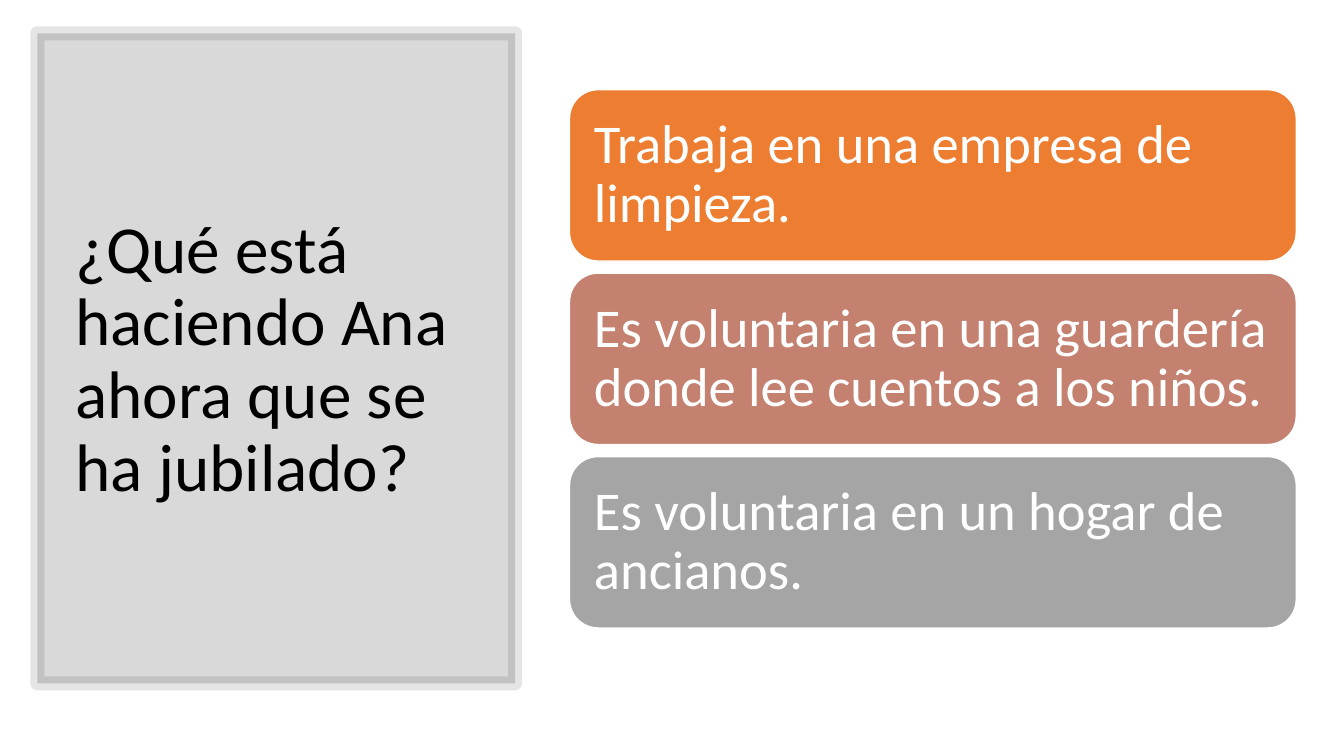
from lxml.etree import SubElement
from pptx import Presentation
from pptx.dml.color import RGBColor
from pptx.enum.shapes import MSO_SHAPE
from pptx.enum.text import MSO_ANCHOR, PP_ALIGN
from pptx.oxml.ns import qn
from pptx.util import Pt


def paint(fill, color, opacity=100):
    fill.solid()
    fill.fore_color.rgb = RGBColor.from_string(color)
    if opacity < 100:
        tint = fill._xPr.find(qn("a:solidFill"))[0]
        SubElement(tint, qn("a:alpha"), val=str(opacity * 1000))


def write(holder, words, size, color, inset_x, inset_y):
    frame = holder.text_frame
    frame.word_wrap = True
    frame.vertical_anchor = MSO_ANCHOR.MIDDLE
    frame.margin_left = frame.margin_right = Pt(inset_x)
    frame.margin_top = frame.margin_bottom = Pt(inset_y)
    paragraph = frame.paragraphs[0]
    paragraph.alignment = PP_ALIGN.LEFT
    paragraph.line_spacing = 0.9
    run = paragraph.add_run()
    run.text = words
    run.font.name = "Calibri"
    run.font.size = Pt(size)
    paint(run.font.fill, color)


deck = Presentation()
deck.slide_width = Pt(960)
deck.slide_height = Pt(540)
slide = deck.slides.add_slide(deck.slide_layouts[6])

question_panel = slide.shapes.add_shape(
    MSO_SHAPE.RECTANGLE, Pt(26.64), Pt(23.76), Pt(341.28), Pt(464.4))
question_panel.shadow.inherit = False
paint(question_panel.fill, "000000", 15)
question_panel.line.width = Pt(10)
paint(question_panel.line.fill, "000000", 10)

question = slide.shapes.add_textbox(Pt(46.8), Pt(50.4), Pt(299.5), Pt(414))
write(question, "¿Qué está haciendo Ana ahora que se ha jubilado?", 48, "000000", 7.2, 3.6)

answers = [
    ("Trabaja en una empresa de limpieza.", "ED7D31"),
    ("Es voluntaria en una guardería donde lee cuentos a los niños.", "C48170"),
    ("Es voluntaria en un hogar de ancianos.", "A5A5A5"),
]
for row, (words, color) in enumerate(answers):
    answer = slide.shapes.add_shape(
        MSO_SHAPE.ROUNDED_RECTANGLE, Pt(406.8), Pt(64.1 + 131.04 * row), Pt(519.1), Pt(122.4))
    answer.shadow.inherit = False
    paint(answer.fill, color)
    answer.line.width = Pt(1)
    paint(answer.line.fill, "FFFFFF")
    write(answer, words, 39, "FFFFFF", 11.5, 11.5)

deck.save("out.pptx")
